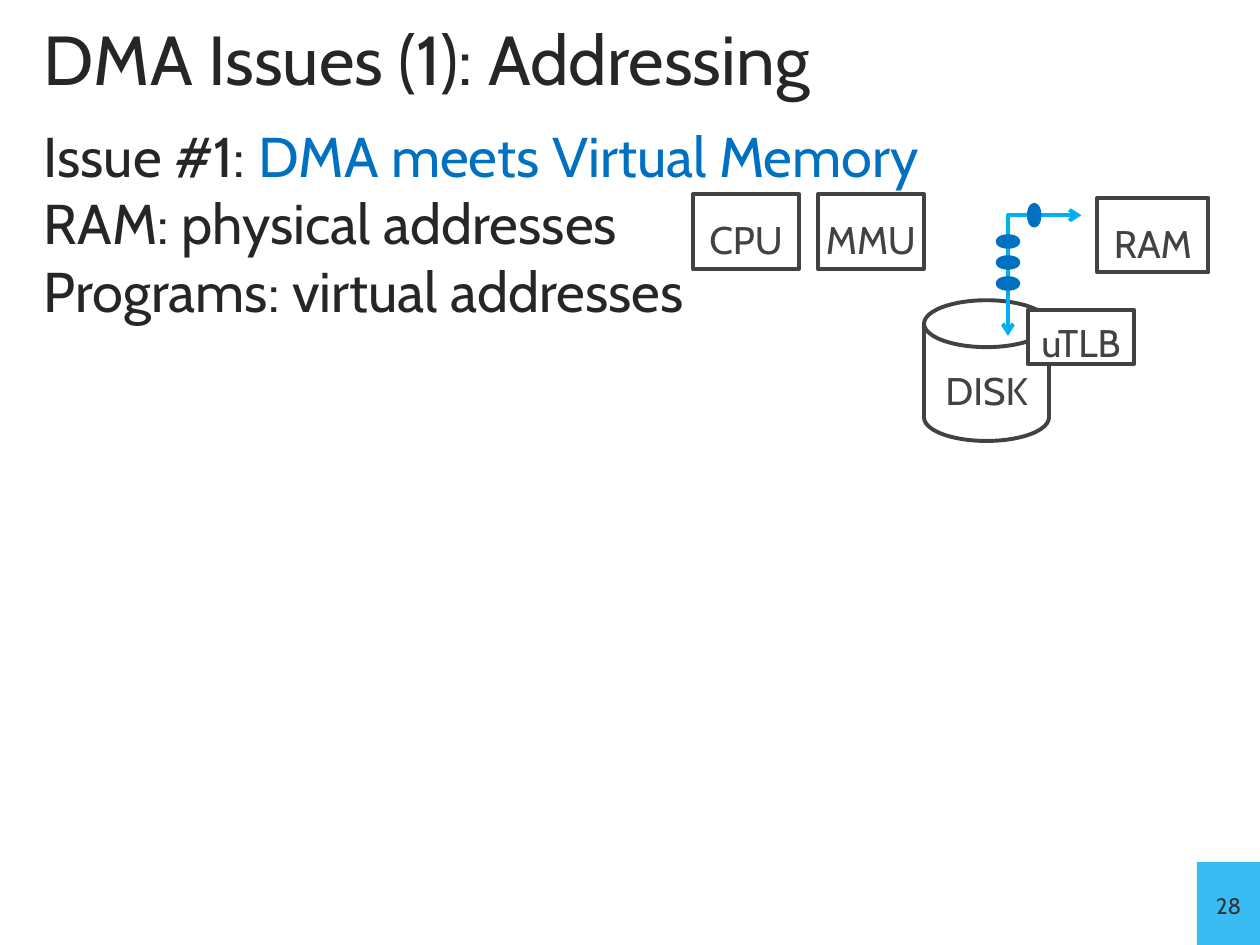
from dataclasses import dataclass

from lxml.etree import SubElement
from pptx import Presentation
from pptx.dml.color import RGBColor
from pptx.enum.shapes import MSO_SHAPE as Shape
from pptx.enum.text import MSO_ANCHOR as Anchor, PP_ALIGN as Align
from pptx.oxml.ns import qn
from pptx.util import Inches, Pt

CELL = 1 / 12  # inches; the slide is a grid of 120 columns by 90 rows


@dataclass(frozen=True)
class Theme:
    font: str = "Cabin"
    ink: str = "262626"
    accent: str = "0070C0"
    outline: str = "424242"
    arrow: str = "00B0F0"
    paper: str = "FFFFFF"
    badge: str = "3ABCF2"
    badge_ink: str = "323232"
    title_size: float = 39.6
    body_size: float = 32
    label_size: float = 22
    number_size: float = 16
    stroke: float = 2.25


@dataclass(frozen=True)
class Box:
    col: float
    row: float
    cols: float
    rows: float

    def inner(self, col, row, cols, rows):
        return Box(self.col + col, self.row + row, cols, rows)

    def place(self):
        return [Inches(n * CELL) for n in (self.col, self.row, self.cols, self.rows)]


THEME = Theme()


def add_run(paragraph, text, size, color):
    run = paragraph.add_run()
    run.text = text
    run.font.name = THEME.font
    run.font.size = Pt(size)
    run.font.color.rgb = RGBColor.from_string(color)
    return run


def paint(shape, fill=None, line=None):
    shape.shadow.inherit = False
    if fill:
        shape.fill.solid()
        shape.fill.fore_color.rgb = RGBColor.from_string(fill)
    else:
        shape.fill.background()
    if line:
        shape.line.color.rgb = RGBColor.from_string(line)
        shape.line.width = Pt(THEME.stroke)
    else:
        shape.line.fill.background()


def add_text(slide, box, lines, size, anchor=Anchor.TOP):
    """Each line is a list of (text, colour) runs."""
    frame = slide.shapes.add_textbox(*box.place()).text_frame
    frame.word_wrap = True
    frame.vertical_anchor = anchor
    for index, runs in enumerate(lines):
        paragraph = frame.add_paragraph() if index else frame.paragraphs[0]
        for text, color in runs:
            add_run(paragraph, text, size, color)


def add_device(slide, box, label, kind=Shape.RECTANGLE, fill=None, inset=0.1, top=0.05):
    device = slide.shapes.add_shape(kind, *box.place())
    paint(device, fill, THEME.outline)
    frame = device.text_frame
    frame.word_wrap = False
    frame.vertical_anchor = Anchor.MIDDLE
    frame.margin_left = frame.margin_right = Inches(inset)
    frame.margin_top, frame.margin_bottom = Inches(top), Inches(0.05)
    paragraph = frame.paragraphs[0]
    paragraph.alignment = Align.CENTER
    paragraph.line_spacing = 1.34
    add_run(paragraph, label, THEME.label_size, THEME.outline)


def add_transfer(slide, box):
    """Two-headed elbow from disk to RAM, with data packets along it."""
    left, top, width, height = box.place()
    builder = slide.shapes.build_freeform(left, top + height)
    builder.add_line_segments([(left, top), (left + width, top)], close=False)
    elbow = builder.convert_to_shape()
    paint(elbow, line=THEME.arrow)
    for end in ("a:headEnd", "a:tailEnd"):
        SubElement(elbow.line._get_or_add_ln(), qn(end), type="arrow")

    falling = [(-1, row, 2, 1) for row in (2, 4, 6)]
    for packet in [*falling, (2, -1, 1, 2)]:
        oval = slide.shapes.add_shape(Shape.OVAL, *box.inner(*packet).place())
        paint(oval, THEME.accent, THEME.accent)


def add_diagram(slide, box):
    add_device(slide, box.inner(0, 0, 10.1, 7.1), "CPU")
    add_device(slide, box.inner(11.9, 0, 10.1, 7.1), "MMU")
    add_device(slide, box.inner(38.5, 0.35, 10.6, 7.1), "RAM")
    add_device(slide, box.inner(22, 10.1, 11.9, 13.4), "DISK",
               kind=Shape.FLOWCHART_MAGNETIC_DISK)
    add_transfer(slide, box.inner(30, 2, 7, 11.5))
    add_device(slide, box.inner(31.9, 11, 10.1, 5.2), "uTLB",
               fill=THEME.paper, inset=0, top=0)


def add_page_number(slide, box, number):
    badge = slide.shapes.add_shape(Shape.RECTANGLE, *box.place())
    paint(badge, THEME.badge)
    frame = badge.text_frame
    frame.word_wrap = False
    frame.vertical_anchor = Anchor.MIDDLE
    paragraph = frame.paragraphs[0]
    paragraph.alignment = Align.CENTER
    run = add_run(paragraph, number, THEME.number_size, THEME.badge_ink)
    run.font._element.set("cap", "small")


def main():
    deck = Presentation()
    deck.slide_width, deck.slide_height = Inches(10), Inches(7.5)
    slide = deck.slides.add_slide(deck.slide_layouts[6])
    add_page_number(slide, Box(114, 82.1, 6, 7.9), "28")
    add_text(slide, Box(3, 2, 114, 7), [[("DMA Issues (1): Addressing", THEME.ink)]],
             THEME.title_size, Anchor.MIDDLE)
    add_text(slide, Box(3, 11, 114, 74), [
        [("Issue #1: ", THEME.ink), ("DMA meets Virtual Memory", THEME.accent)],
        [("RAM: physical addresses", THEME.ink)],
        [("Programs: virtual addresses", THEME.ink)],
    ], THEME.body_size)
    add_diagram(slide, Box(66, 18.5, 49.1, 23.5))
    deck.save("out.pptx")


if __name__ == "__main__":
    main()
